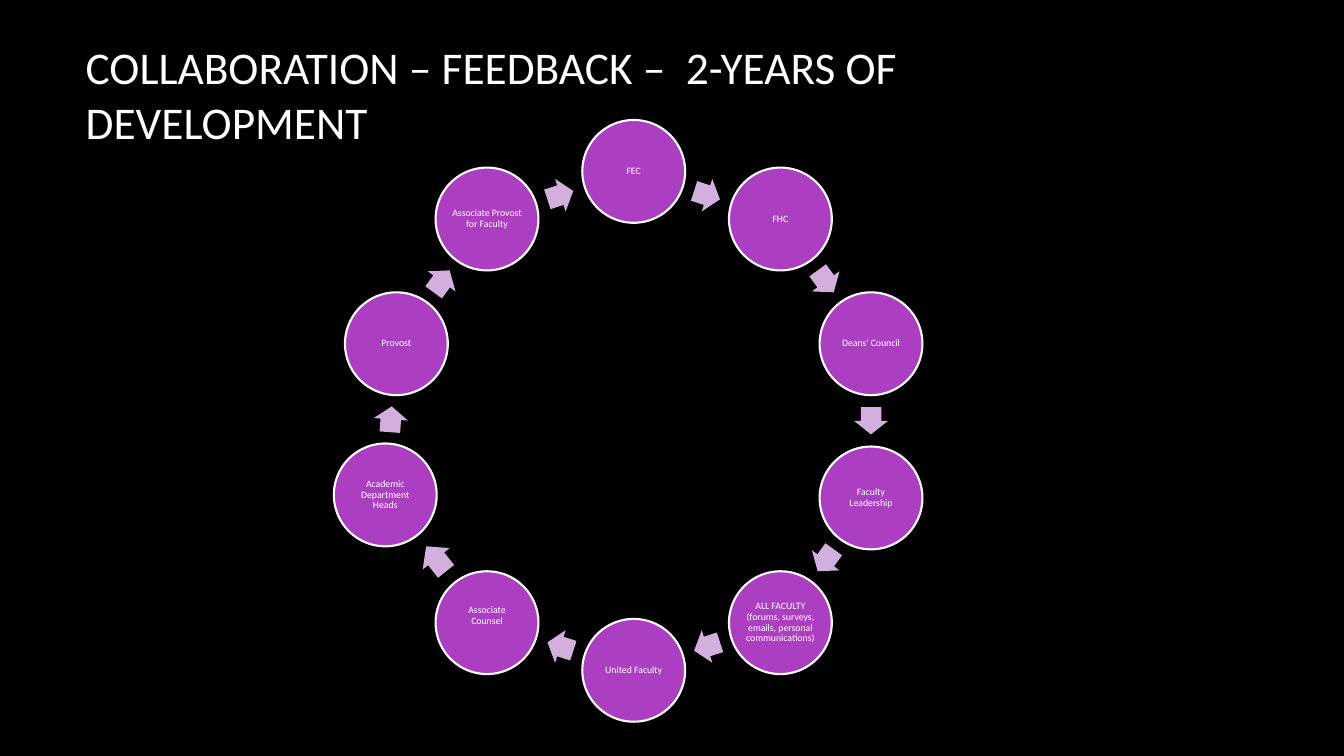
from math import atan2, cos, degrees, hypot, radians, sin

from pptx import Presentation
from pptx.dml.color import RGBColor
from pptx.enum.shapes import MSO_SHAPE
from pptx.enum.text import MSO_ANCHOR, MSO_AUTO_SIZE, PP_ALIGN
from pptx.util import Emu, Pt

EMU_PER_PX = 9144
BLACK = RGBColor(0x00, 0x00, 0x00)
WHITE = RGBColor(0xFF, 0xFF, 0xFF)
PURPLE = RGBColor(0xAC, 0x3E, 0xC1)
LILAC = RGBColor(0xD2, 0xAF, 0xDD)
FONT = "Calibri"

DIAMETER = 102
ARROW_HEIGHT = 34
ARROW_SHARE = 0.53
INSET = 1

TITLE = "COLLABORATION – FEEDBACK –  2-YEARS OF DEVELOPMENT"
GROUPS = [
    "FEC",
    "FHC",
    "Deans' Council",
    "Faculty Leadership",
    "ALL FACULTY (forums, surveys, emails, personal communications)",
    "United Faculty",
    "Associate Counsel",
    "Academic Department Heads",
    "Provost",
    "Associate Provost for Faculty",
]
NUDGES = {"Academic Department Heads": (-11, -3)}
TEXT_LIFTS = {"Associate Counsel": 14}


def px(n):
    return Emu(round(n * EMU_PER_PX))


def add_run(p, text, size):
    r = p.add_run()
    r.text = text
    r.font.name = FONT
    r.font.size = Pt(size)
    r.font.color.rgb = WHITE


def add_centred(shapes, kind, center, w, h, color):
    x, y = center
    sp = shapes.add_shape(kind, px(x - w / 2), px(y - h / 2), px(w), px(h))
    sp.shadow.inherit = False
    sp.fill.solid()
    sp.fill.fore_color.rgb = color
    sp.line.fill.background()
    return sp


def add_title(s, x, y, w, h):
    sp = s.shapes.title
    sp.left, sp.top, sp.width, sp.height = px(x), px(y), px(w), px(h)
    tf = sp.text_frame
    tf.word_wrap = True
    tf.auto_size = MSO_AUTO_SIZE.NONE
    tf.vertical_anchor = MSO_ANCHOR.MIDDLE
    p = tf.paragraphs[0]
    p.alignment = PP_ALIGN.LEFT
    add_run(p, TITLE, 32.4)


def add_node(shapes, center, text):
    sp = add_centred(shapes, MSO_SHAPE.OVAL, center, DIAMETER, DIAMETER, PURPLE)
    sp.line.color.rgb = WHITE
    sp.line.width = Pt(1.5)
    tf = sp.text_frame
    tf.word_wrap = True
    tf.vertical_anchor = MSO_ANCHOR.MIDDLE
    tf.margin_left = tf.margin_right = tf.margin_top = px(INSET)
    tf.margin_bottom = px(INSET + TEXT_LIFTS.get(text, 0))
    p = tf.paragraphs[0]
    p.alignment = PP_ALIGN.CENTER
    p.line_spacing = 0.9
    p.space_after = Pt(2.5)
    add_run(p, text, 7)


def add_arrow(shapes, start, end):
    dx, dy = end[0] - start[0], end[1] - start[1]
    middle = (start[0] + dx / 2, start[1] + dy / 2)
    length = (hypot(dx, dy) - DIAMETER) * ARROW_SHARE
    sp = add_centred(shapes, MSO_SHAPE.RIGHT_ARROW, middle, length, ARROW_HEIGHT, LILAC)
    sp.adjustments[0] = 0.6
    sp.adjustments[1] = 0.5
    sp.rotation = degrees(atan2(dy, dx)) % 360


def add_cycle(s, x, y, size):
    shapes = s.shapes.add_group_shape().shapes
    radius = (size - DIAMETER) / 2
    centers = []
    for i, text in enumerate(GROUPS):
        angle = radians(360 / len(GROUPS) * i - 90)
        dx, dy = NUDGES.get(text, (0, 0))
        centers.append((x + size / 2 + radius * cos(angle) + dx,
                        y + size / 2 + radius * sin(angle) + dy))
    for text, start, end in zip(GROUPS, centers, centers[1:] + centers[:1]):
        add_node(shapes, start, text)
        add_arrow(shapes, start, end)


def main():
    prs = Presentation()
    prs.slide_width, prs.slide_height = px(1333), px(750)
    s = prs.slides.add_slide(prs.slide_layouts[5])
    s.background.fill.solid()
    s.background.fill.fore_color.rgb = BLACK
    add_title(s, 75, 67, 1108, 52)
    add_cycle(s, 330, 119, 597)
    prs.save("out.pptx")


if __name__ == "__main__":
    main()
